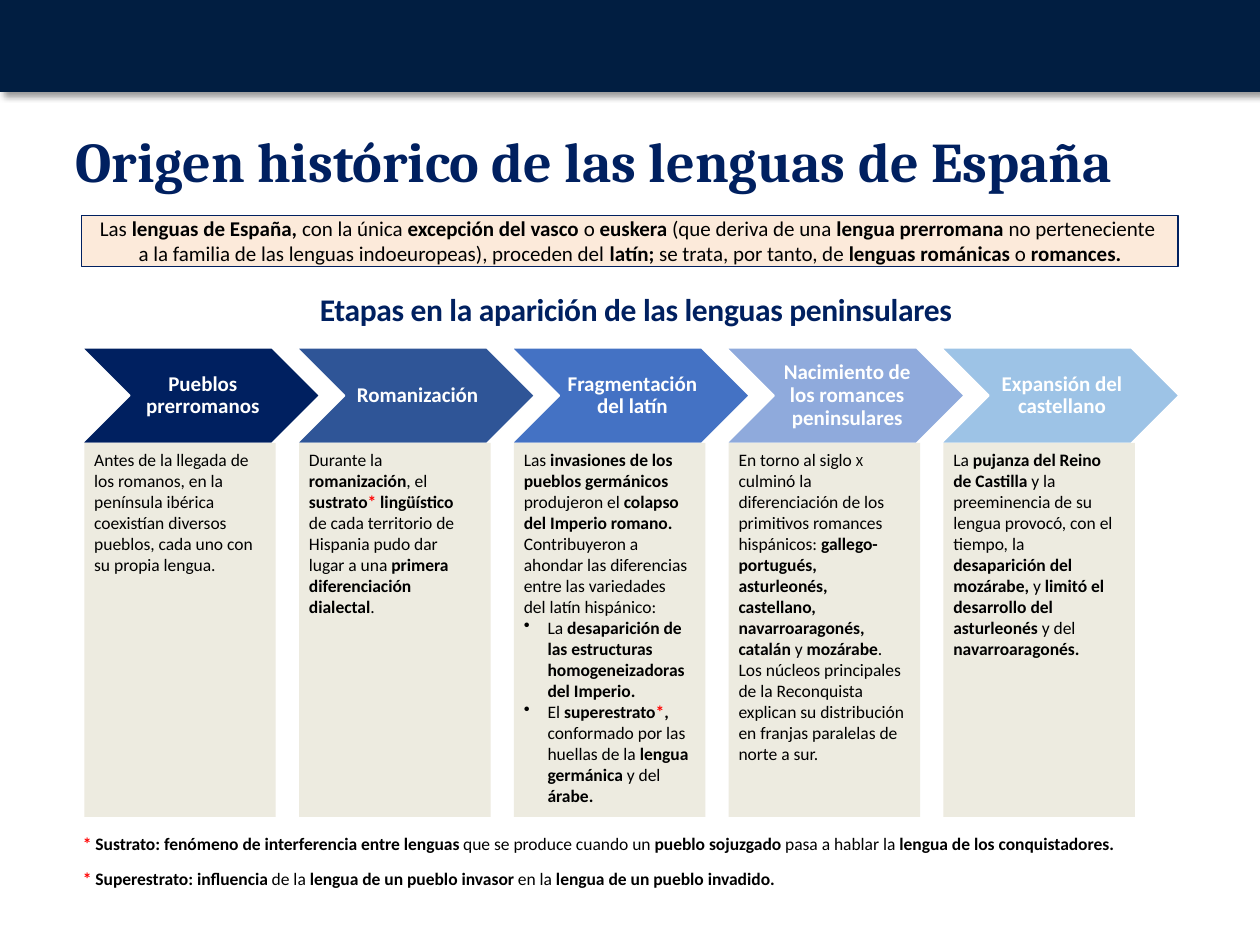
"""Build the slide on the historical origin of the languages of Spain."""
from lxml.etree import fromstring
from pptx import Presentation
from pptx.dml.color import RGBColor as Rgb
from pptx.enum.shapes import MSO_SHAPE as Form
from pptx.enum.text import MSO_ANCHOR as Anchor, MSO_AUTO_SIZE as Fit, PP_ALIGN as Align
from pptx.oxml.ns import nsdecls
from pptx.util import Cm, Pt

HUES = {
    "bar": "011E41", "navy": "002060", "cream": "FCEADA", "sand": "EDEBE0",
    "white": "FFFFFF", "black": "000000", "red": "FF0000", "blue": "2F5597",
    "mid": "4472C4", "soft": "8FAADC", "pale": "9DC3E6",
}
STEP = 4.33
STAGES = [
    ("Pueblos prerromanos", "navy", [
        "Antes de la llegada de los romanos, en la península ibérica",
        "coexistían diversos pueblos, cada uno con su propia lengua."]),
    ("Romanización", "blue", [
        "Durante la |romanización|, el |sustrato||*|| lingüístico |de cada territorio de "
        "Hispania pudo dar lugar a una |primera diferenciación dialectal|."]),
    ("Fragmentación del latín", "mid", [
        "Las |invasiones de los pueblos germánicos |produjeron el |colapso del Imperio "
        "romano. |Contribuyeron a ahondar las diferencias entre las variedades del latín "
        "hispánico:",
        "•La |desaparición de las estructuras homogeneizadoras del Imperio.",
        "•El |superestrato||*||, |conformado por las huellas de la |lengua germánica "
        "|y del |árabe."]),
    ("Nacimiento de los romances peninsulares", "soft", [
        "En torno al siglo ||x|| culminó la diferenciación de los primitivos romances "
        "hispánicos: |gallego-portugués, asturleonés, castellano,",
        "|navarroaragonés, catalán |y |mozárabe|. Los núcleos principales de la "
        "Reconquista explican su distribución en franjas paralelas de norte a sur."]),
    ("Expansión del castellano", "pale", [
        "La |pujanza del Reino de Castilla |y la preeminencia de su lengua provocó, con el "
        "tiempo, la |desaparición del mozárabe, |y |limitó el desarrollo del asturleonés "
        "|y del |navarroaragonés."]),
]
INTRO = (
    "Las |lenguas de España, |con la única |excepción del vasco |o |euskera |(que deriva de "
    "una |lengua prerromana |no perteneciente ||\n||a la familia de las lenguas "
    "indoeuropeas), proceden del |latín; |se trata, por tanto, de |lenguas románicas "
    "|o |romances.")
NOTES = [
    "|*|| Sustrato: fenómeno de interferencia entre lenguas |que se produce cuando un "
    "|pueblo sojuzgado |pasa a hablar la |lengua de los conquistadores.",
    "|*|| Superestrato: influencia |de la |lengua de un pueblo invasor |en la |lengua de un "
    "pueblo invadido.",
]


class Deck:
    """Style and current slide."""

    def __init__(self):
        self.show = Presentation()
        self.show.slide_width, self.show.slide_height = Cm(25.4), Cm(19.05)
        self.slide = self.show.slides.add_slide(self.show.slide_layouts[5])

    def hue(self, name):
        return Rgb.from_string(HUES[name])

    def font(self, para, size, hue="black", face="Calibri"):
        font = para.font
        font.size, font.name = Pt(size), face
        font.color.rgb = self.hue(hue)
        return font

    def mark(self, para, text):
        for i, part in enumerate(text.split("|")):
            if part == "\n":
                para.add_line_break()
            elif part:
                run = para.add_run()
                run.text = part
                run.font.bold = bool(i % 2)
                if part == "*":
                    run.font.color.rgb = self.hue("red")
                elif part == "x":
                    run.font._element.set("cap", "small")

    def lay(self, frame, lines, size, hue="black", align=Align.LEFT):
        frame.word_wrap = True
        for i, line in enumerate(lines):
            para = frame.add_paragraph() if i else frame.paragraphs[0]
            para.alignment = align
            if line.startswith("•"):
                prop = para._p.get_or_add_pPr()
                prop.set("marL", str(Cm(0.48)))
                prop.set("indent", str(-Cm(0.48)))
                prop.append(fromstring(f'<a:buChar {nsdecls("a")} char="•"/>'))
            self.font(para, size, hue)
            self.mark(para, line.lstrip("•"))

    def inset(self, frame, left=0, top=0, right=0, foot=0):
        frame.margin_left, frame.margin_top = Cm(left), Cm(top)
        frame.margin_right, frame.margin_bottom = Cm(right), Cm(foot)

    def title(self, text, box):
        shape = self.slide.shapes.title
        shape.left, shape.top, shape.width, shape.height = map(Cm, box)
        frame = shape.text_frame
        frame.text = text
        frame.auto_size, frame.vertical_anchor = Fit.NONE, Anchor.TOP
        para = frame.paragraphs[0]
        para.alignment, para.line_spacing = Align.LEFT, 0.9
        self.font(para, 32, "navy", "Cambria").bold = True

    def shape(self, box, fill, line=None, width=1, form=Form.RECTANGLE):
        shape = self.slide.shapes.add_shape(form, *map(Cm, box))
        shape.shadow.inherit = False
        shape.fill.solid()
        shape.fill.fore_color.rgb = self.hue(fill)
        if line:
            shape.line.color.rgb = self.hue(line)
            shape.line.width = Pt(width)
        else:
            shape.line.fill.background()
        return shape

    def bar(self, box):
        shape = self.shape(box, "bar", "bar")
        shape._element.spPr[-1].append(fromstring(
            f'<a:outerShdw {nsdecls("a")} blurRad="{Pt(4)}" dist="{Pt(3)}" dir="2700000">'
            f'<a:srgbClr val="{HUES["black"]}"><a:alpha val="40000"/></a:srgbClr>'
            '</a:outerShdw>'))

    def text(self, box, lines, size=10, hue="black"):
        frame = self.slide.shapes.add_textbox(*map(Cm, box)).text_frame
        self.lay(frame, lines, size, hue)
        frame.auto_size = Fit.SHAPE_TO_FIT_TEXT
        return frame

    def arrow(self, box, text, fill):
        frame = self.shape(box, fill, "white", form=Form.CHEVRON).text_frame
        self.inset(frame, 0.13, 0.05, 0.05, 0.05)
        frame.vertical_anchor = Anchor.MIDDLE
        self.lay(frame, ["|" + text], 12, "white", Align.CENTER)
        frame.paragraphs[0].line_spacing = 0.9

    def panel(self, box, text):
        frame = self.shape(box, "cream", "navy", 0.75).text_frame
        self.inset(frame)
        frame.vertical_anchor = Anchor.TOP
        self.lay(frame, [text], 12, align=Align.CENTER)

    def head(self, box, text):
        frame = self.text(box, ["|" + text], 18, "navy")
        self.inset(frame, 0.25, 0.08)
        frame.paragraphs[0].runs[0].font._element.set("spc", "-20")


def main():
    deck = Deck()
    deck.bar((0, 0, 25.4, 1.83))
    deck.title("Origen histórico de las lenguas de España", (1.27, 2.57, 22.02, 1.8))
    deck.panel((1.65, 4.34, 22.1, 1.04), INTRO)
    deck.head((6.2, 5.77, 13.03, 0.86), "Etapas en la aparición de las lenguas peninsulares")
    for i, (name, fill, lines) in enumerate(STAGES):
        left = 1.65 + i * STEP
        deck.arrow((left, 7.01, 4.8, 1.93), name, fill)
        deck.shape((left + 0.05, 8.93, 3.86, 7.54), "sand")
        deck.text((left, 8.92, 3.84, 7.5), lines)
    for i, note in enumerate(NOTES):
        deck.text((1.42, 16.66 + i * 0.72, 21.46, 0.69), [note])
    deck.show.save("out.pptx")


if __name__ == "__main__":
    main()
